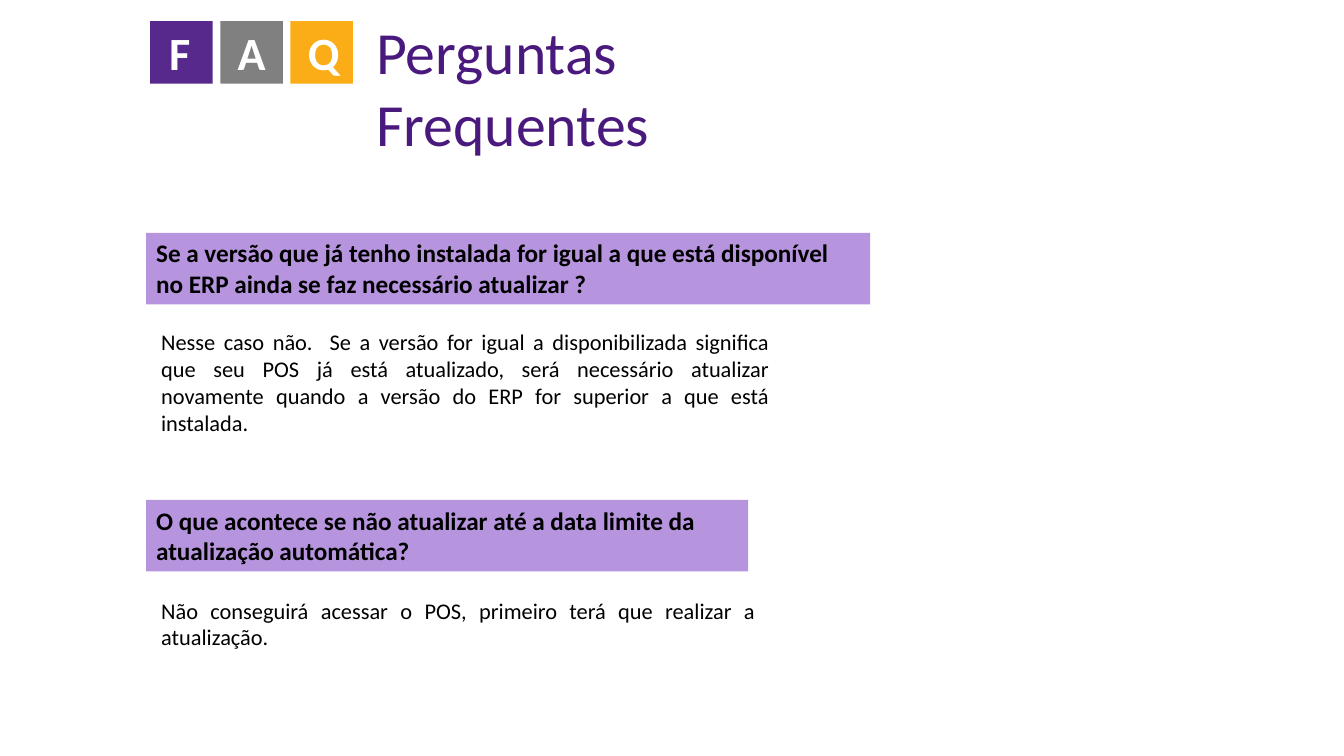
import pptx
import pptx.util
import pptx.dml.color
import pptx.enum.shapes
import pptx.enum.text
import pptx.oxml.ns
from lxml import etree

Inches = pptx.util.Inches
ALIGN = pptx.enum.text.PP_ALIGN
AUTO = pptx.enum.text.MSO_AUTO_SIZE
TILE = 0.62
TILE_STEP = 1.39 / 2


def rgb(value):
    return pptx.dml.color.RGBColor.from_string(value)


def write(s, text, size=16, color="000000", bold=False, align=ALIGN.LEFT,
          wrap=True, fit=AUTO.SHAPE_TO_FIT_TEXT):
    tf = s.text_frame
    tf.word_wrap = wrap
    tf.auto_size = fit
    tf.vertical_anchor = pptx.enum.text.MSO_ANCHOR.TOP
    p = tf.paragraphs[0]
    p.alignment = align
    r = p.add_run()
    r.text = text
    r.font.name = "Calibri"
    r.font.size = pptx.util.Pt(size)
    r.font.bold = bold
    r.font.color.rgb = rgb(color)


def place(s, x, y, w, h):
    s.left, s.top, s.width, s.height = Inches(x), Inches(y), Inches(w), Inches(h)


def add_rect(slide, x, y, w, h, color, opacity=100):
    s = slide.shapes.add_shape(pptx.enum.shapes.MSO_SHAPE.RECTANGLE,
                               Inches(x), Inches(y), Inches(w), Inches(h))
    s.shadow.inherit = False
    s.fill.solid()
    s.fill.fore_color.rgb = rgb(color)
    s.line.fill.background()
    if opacity < 100:
        clr = s.fill._xPr.find(".//" + pptx.oxml.ns.qn("a:srgbClr"))
        etree.SubElement(clr, pptx.oxml.ns.qn("a:alpha"), val=str(opacity * 1000))
    return s


def add_text(slide, x, y, w, h, text, **fmt):
    s = slide.shapes.add_textbox(Inches(x), Inches(y), Inches(w), Inches(h))
    write(s, text, **fmt)


def add_tile(slide, x, letter, color, label_w):
    add_rect(slide, x, 0.21, TILE, TILE, color)
    add_text(slide, x + (TILE - label_w) / 2, 0.19, label_w, 0.66, letter,
             size=33, color="FFFFFF", bold=True, wrap=False)


def add_question(slide, y, w, text):
    s = add_rect(slide, 1.45, y, w, 0.71, "9A6CD2", opacity=72)
    write(s, text, size=18, bold=True)


def add_answer(slide, y, w, h, text):
    add_text(slide, 1.5, y, w, h, text, align=ALIGN.JUSTIFY)


def main():
    prs = pptx.Presentation()
    prs.slide_width, prs.slide_height = Inches(13.33), Inches(7.5)
    slide = prs.slides.add_slide(prs.slide_layouts[5])

    # Title
    title = slide.shapes.title
    place(title, 3.63, 0.1, 5.38, 0.95)
    write(title, "Perguntas Frequentes", size=42.7, color="49197D", fit=AUTO.NONE)

    # Questions and answers
    add_question(slide, 2.31, 7.18,
                 "Se a versão que já tenho instalada for igual a que está "
                 "disponível no ERP ainda se faz necessário atualizar ?")
    add_answer(slide, 3.21, 6.23, 1.17,
               "Nesse caso não.  Se a versão for igual a disponibilizada significa "
               "que seu POS já está atualizado, será necessário atualizar novamente "
               "quando a versão do ERP for superior a que está instalada.")
    add_question(slide, 4.96, 5.97,
                 "O que acontece se não atualizar até a data limite da "
                 "atualização automática?")
    add_answer(slide, 5.87, 6.09, 0.64,
               "Não conseguirá acessar o POS, primeiro terá que realizar a "
               "atualização.")

    # FAQ letter tiles
    tiles = [("F", "58298C", 0.44), ("A", "808080", 0.47), ("Q", "FBAD17", 0.47)]
    for i, (letter, color, label_w) in enumerate(tiles):
        add_tile(slide, 1.49 + i * TILE_STEP, letter, color, label_w)

    prs.save("out.pptx")


if __name__ == "__main__":
    main()
